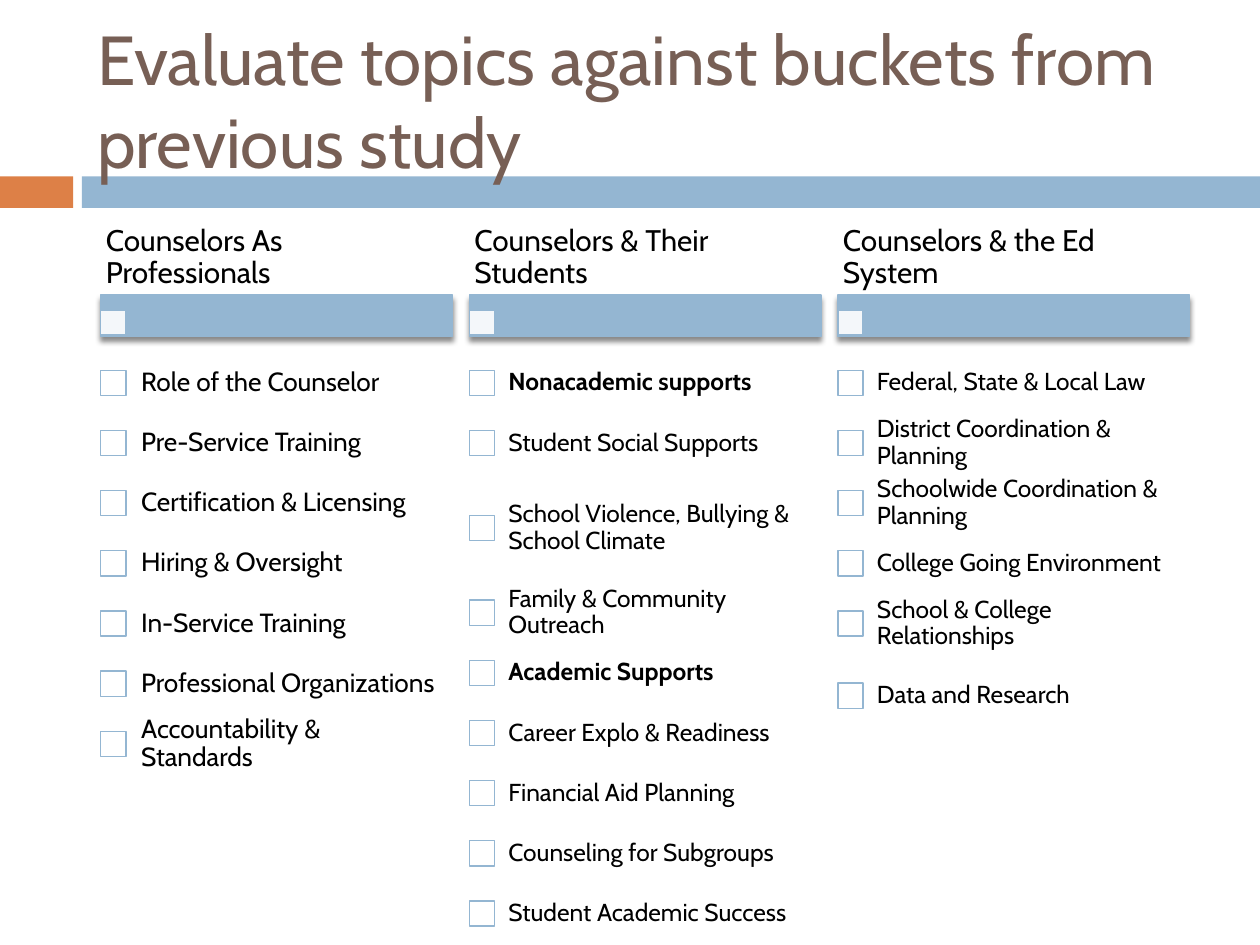
from pptx import Presentation, util as u
from pptx.dml.color import RGBColor
from pptx.enum import shapes, text
from pptx.oxml import parse_xml
from pptx.oxml.ns import nsdecls, qn
from lxml import etree

BLUE = RGBColor(0x94, 0xB6, 0xD2)
ORANGE = RGBColor(0xDD, 0x80, 0x47)
BROWN = RGBColor(0x77, 0x5F, 0x55)
WHITE = RGBColor(0xFF, 0xFF, 0xFF)
BLACK = RGBColor(0, 0, 0)
FONT = "Cabin"

WIDE, HIGH = 10, 7.5
LEFT, TOP, PITCH, COL = 0.8, 1.75, 2.925, 2.79
HEAD, BAR, GAP = 0.59, 0.33, 0.13
ROW = 0.4775
TICK = 0.2

COLUMNS = [
    ("Counselors As Professionals", 15, 0.12, [
        ("Role of the Counselor", 1),
        ("Pre-Service Training", 1),
        ("Certification & Licensing", 1),
        ("Hiring & Oversight", 1),
        ("In-Service Training", 1),
        ("Professional Organizations", 1),
        ("Accountability & Standards", 1)]),
    ("Counselors & Their Students", 14, 0.11, [
        ("Nonacademic supports", 1),
        ("Student Social Supports", 1),
        ("School Violence, Bullying & School Climate", 1.82),
        ("Family & Community Outreach", 1),
        ("Academic Supports", 1),
        ("Career Explo & Readiness", 1),
        ("Financial Aid Planning", 1),
        ("Counseling for Subgroups", 1),
        ("Student Academic Success", 1)]),
    ("Counselors & the Ed System", 14, 0.11, [
        ("Federal, State & Local Law", 1),
        ("District Coordination & Planning", 1),
        ("Schoolwide Coordination & Planning", 1),
        ("College Going Environment", 1),
        ("School & College Relationships", 1),
        ("Data and Research", 1.4)]),
]
STRONG = {"Nonacademic supports", "Academic Supports"}


def add_rect(slide, box, fill, edge=None):
    rect = slide.shapes.add_shape(
        shapes.MSO_SHAPE.RECTANGLE, *[u.Inches(n) for n in box])
    rect.shadow.inherit = False
    rect.fill.solid()
    rect.fill.fore_color.rgb = fill
    if edge is None:
        rect.line.fill.background()
    else:
        rect.line.color.rgb = edge
        rect.line.width = u.Pt(0.79)
    return rect


def add_shade(rect):
    props = rect.element.spPr
    props.remove(props.find(qn("a:effectLst")))
    props.append(parse_xml(
        f'<a:effectLst {nsdecls("a")}>'
        '<a:outerShdw blurRad="38100" dist="30480" dir="5400000" '
        'rotWithShape="0"><a:srgbClr val="000000"><a:alpha val="45000"/>'
        '</a:srgbClr></a:outerShdw></a:effectLst>'))


def add_label(slide, box, words, size, side, edge, bold=False):
    label = slide.shapes.add_textbox(*[u.Inches(n) for n in box])
    frame = label.text_frame
    frame.word_wrap = True
    frame.vertical_anchor = text.MSO_ANCHOR.MIDDLE
    frame.margin_left = frame.margin_right = u.Inches(side)
    frame.margin_top = frame.margin_bottom = u.Inches(edge)
    para = frame.paragraphs[0]
    para.text = words
    para.line_spacing = 0.9
    para.font.name = FONT
    para.font.size = u.Pt(size)
    para.font.color.rgb = BLACK
    para.font.bold = bold


def add_title(slide, box, words):
    left, top, width, height = box
    add_rect(slide, (0, 1.4, 0.58, 0.25), ORANGE)
    add_rect(slide, (0.65, 1.4, WIDE - 0.65, 0.25), BLUE)
    title = slide.shapes.title
    title.left, title.top = u.Inches(left), u.Inches(top)
    title.width, title.height = u.Inches(width), u.Inches(height)
    title.element.getparent().append(title.element)
    frame = title.text_frame
    frame.word_wrap = True
    frame.auto_size = text.MSO_AUTO_SIZE.NONE
    frame.vertical_anchor = text.MSO_ANCHOR.MIDDLE
    para = frame.paragraphs[0]
    para.text = words
    para.alignment = text.PP_ALIGN.LEFT
    para.font.name = FONT
    para.font.size = u.Pt(39.6)
    para.font.color.rgb = BROWN


def add_column(slide, left, top, width, column):
    head, size, inset, items = column
    add_shade(add_rect(slide, (left, top + HEAD, width, BAR), BLUE, BLUE))
    tick = add_rect(
        slide, (left, top + HEAD + 0.12, TICK, TICK), WHITE, BLUE)
    color = tick.element.spPr.find(qn("a:solidFill"))[0]
    etree.SubElement(color, qn("a:alpha")).set("val", "90000")
    add_label(slide, (left, top, width, HEAD), head, 17, 0.04, 0.02)
    y = top + HEAD + BAR + GAP
    for words, rows in items:
        high = rows * ROW
        add_rect(slide, (left, y + (high - TICK) / 2, TICK, TICK),
                 WHITE, BLUE)
        add_label(slide, (left + TICK, y, width - TICK, high),
                  words, size, inset, inset, words in STRONG)
        y += high


def main():
    deck = Presentation()
    deck.slide_width, deck.slide_height = u.Inches(WIDE), u.Inches(HIGH)
    slide = deck.slides.add_slide(deck.slide_layouts[5])
    add_title(slide, (0.67, 0.25, 8.92, 1.08),
              "Evaluate topics against buckets from previous study")
    for i, column in enumerate(COLUMNS):
        add_column(slide, LEFT + i * PITCH, TOP, COL, column)
    deck.save("out.pptx")


if __name__ == "__main__":
    main()
